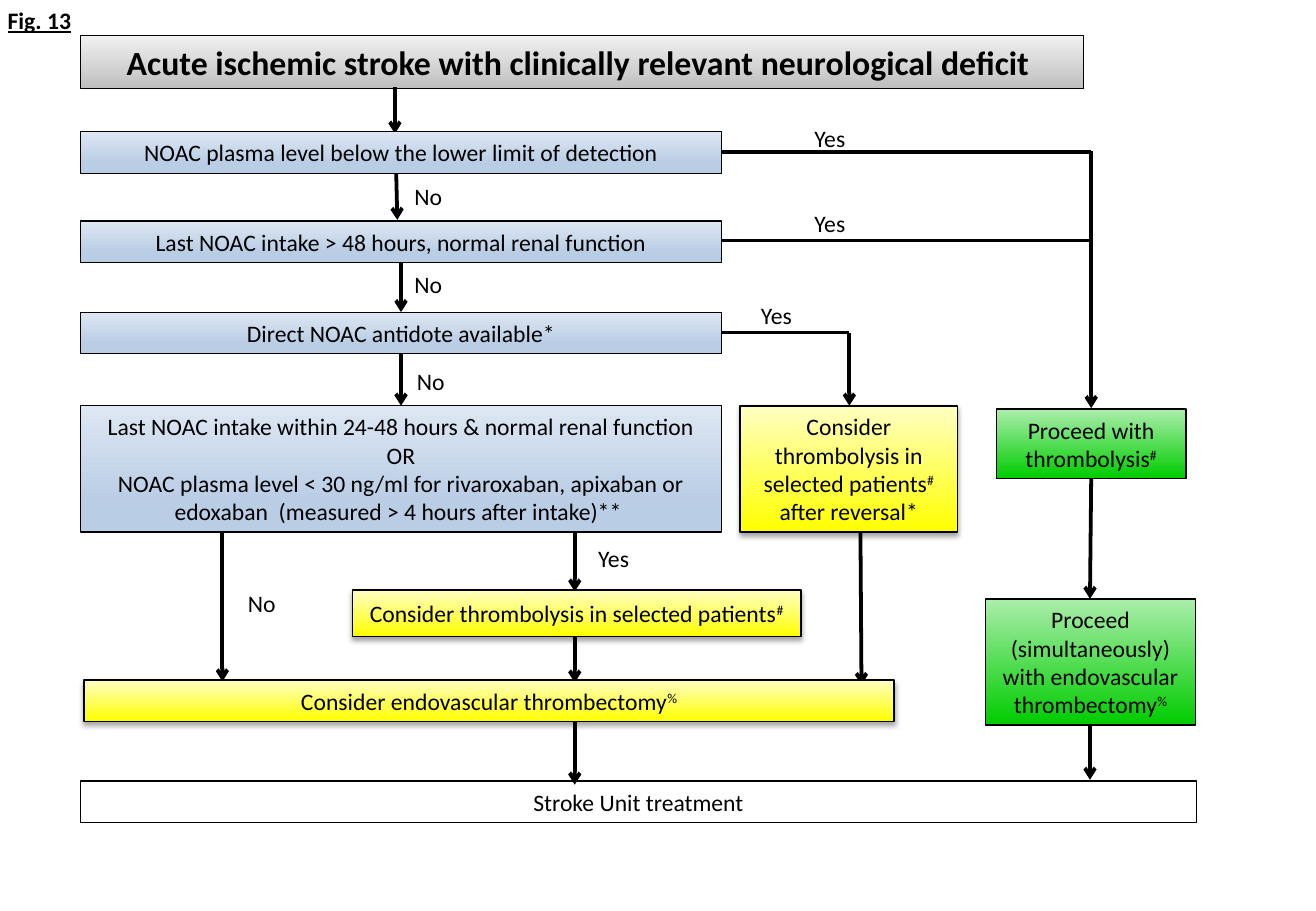
import itertools

import pptx
import pptx.dml.color
import pptx.enum.dml
import pptx.enum.shapes
import pptx.enum.text
import pptx.oxml
import pptx.oxml.ns
import pptx.util

RGBColor = pptx.dml.color.RGBColor
Inches = pptx.util.Inches
Pt = pptx.util.Pt
Anchor = pptx.enum.text.MSO_ANCHOR

BLACK = RGBColor(0x00, 0x00, 0x00)
GREY = (RGBColor(0xF1, 0xF1, 0xF1), RGBColor(0xBF, 0xBF, 0xBF), 1)
BLUE = (RGBColor(0xDE, 0xE7, 0xF3), RGBColor(0xB9, 0xCD, 0xE5), 0.77)
GREEN = (RGBColor(0xAB, 0xEE, 0xAB), RGBColor(0x00, 0xCC, 0x00), 1)
YELLOW = (RGBColor(0xFF, 0xFF, 0xC4), RGBColor(0xFF, 0xFF, 0x00), 1)

LEFT, RIGHT = 0.66, 9.85
QUESTION_WIDTH = 5.28
QUESTION_RIGHT = LEFT + QUESTION_WIDTH
ROW_HEIGHT, TALL_HEIGHT = 0.34, 1.04
LEVEL_ROW, INTAKE_ROW, ANTIDOTE_ROW, WINDOW_ROW = 1.08, 1.82, 2.57, 3.34
SELECTED_ROW, ENDOVASCULAR_ROW, STROKE_UNIT_ROW = 4.86, 5.6, 6.43
WINDOW_BOTTOM = WINDOW_ROW + TALL_HEIGHT
NO_COLUMN, MAIN_COLUMN, SELECTED_COLUMN = 1.83, 3.3, 4.73
REVERSAL_COLUMN, THROMBOLYSIS_COLUMN = 6.99, 8.98

SHADOW = (
    '<a:effectLst %s><a:outerShdw blurRad="39370" dist="22860" dir="5400000" rotWithShape="0">'
    '<a:srgbClr val="000000"><a:alpha val="35000"/></a:srgbClr></a:outerShdw></a:effectLst>'
    % pptx.oxml.ns.nsdecls("a")
)


def write_text(shape, text, size=14, bold=False):
    frame = shape.text_frame
    for index, line in enumerate(text.split("\n")):
        paragraph = frame.add_paragraph() if index else frame.paragraphs[0]
        paragraph.alignment = pptx.enum.text.PP_ALIGN.CENTER
        paragraph.font.name = "Calibri"
        paragraph.font.size = Pt(size)
        paragraph.font.bold = bold
        paragraph.font.color.rgb = BLACK
        for raised, characters in itertools.groupby(line, key=lambda character: character in "#%"):
            run = paragraph.add_run()
            run.text = "".join(characters)
            if raised:
                run.font._element.set("baseline", "30000")


def paint_box(shape, gradient, line_width):
    shape.line.color.rgb = BLACK
    shape.line.width = Pt(line_width)
    if gradient is None:
        shape.fill.background()
        return
    top_color, bottom_color, end = gradient
    shape.fill.gradient()
    shape.fill.gradient_angle = 270
    first, last = shape.fill.gradient_stops
    first.color.rgb, first.position = top_color, 0
    last.color.rgb, last.position = bottom_color, end


presentation = pptx.Presentation()
presentation.slide_width = Inches(10.83)
presentation.slide_height = Inches(7.5)
slide = presentation.slides.add_slide(presentation.slide_layouts[5])

title = slide.shapes.title
title.left, title.top, title.width, title.height = map(Inches, (LEFT, 0.29, 8.26, 0.44))
title.text_frame.auto_size = pptx.enum.text.MSO_AUTO_SIZE.NONE
title.text_frame.vertical_anchor = Anchor.TOP
paint_box(title, GREY, 0.75)
write_text(title, "Acute ischemic stroke with clinically relevant neurological deficit ", 20, True)

arrows = [
    (3.25, 0.72, 3.25, 1.1),
    (3.26, 1.4, 3.27, 1.81),
    (MAIN_COLUMN, 2.15, MAIN_COLUMN, ANTIDOTE_ROW),
    (MAIN_COLUMN, 2.91, MAIN_COLUMN, WINDOW_ROW),
    (NO_COLUMN, WINDOW_BOTTOM, NO_COLUMN, 5.61),
    (SELECTED_COLUMN, 4.34, SELECTED_COLUMN, 4.87),
    (SELECTED_COLUMN, 4.99, SELECTED_COLUMN, 5.62),
    (SELECTED_COLUMN, 5.87, SELECTED_COLUMN, 6.46),
    (REVERSAL_COLUMN, 2.74, REVERSAL_COLUMN, WINDOW_ROW),
    (7.08, 4.23, 7.09, 5.64),
    (THROMBOLYSIS_COLUMN, 1.24, THROMBOLYSIS_COLUMN, 3.36),
    (THROMBOLYSIS_COLUMN, 3.94, 8.97, 4.93),
    (8.97, 5.85, 8.97, 6.42),
]
branches = [
    (QUESTION_RIGHT, 1.25, THROMBOLYSIS_COLUMN, 1.25),
    (QUESTION_RIGHT, 1.98, THROMBOLYSIS_COLUMN, 1.98),
    (QUESTION_RIGHT, 2.74, REVERSAL_COLUMN, 2.74),
]
for ends in branches + arrows:
    connector = slide.shapes.add_connector(
        pptx.enum.shapes.MSO_CONNECTOR.STRAIGHT, *map(Inches, ends))
    connector.line.color.rgb = BLACK
    connector.line.width = Pt(2.25 if ends in arrows else 2)
    if ends in arrows:
        connector.line._get_or_add_ln().append(pptx.oxml.parse_xml(
            '<a:tailEnd %s type="arrow"/>' % pptx.oxml.ns.nsdecls("a")))
    connector._element.spPr.append(pptx.oxml.parse_xml(
        "<a:effectLst %s/>" % pptx.oxml.ns.nsdecls("a")))

boxes = [
    (LEFT, LEVEL_ROW, QUESTION_WIDTH, 0.35, BLUE,
     "NOAC plasma level below the lower limit of detection"),
    (LEFT, INTAKE_ROW, QUESTION_WIDTH, ROW_HEIGHT, BLUE,
     "Last NOAC intake > 48 hours, normal renal function"),
    (LEFT, ANTIDOTE_ROW, QUESTION_WIDTH, ROW_HEIGHT, BLUE, "Direct NOAC antidote available*"),
    (LEFT, WINDOW_ROW, QUESTION_WIDTH, TALL_HEIGHT, BLUE,
     "Last NOAC intake within 24-48 hours & normal renal function\nOR\n"
     "NOAC plasma level < 30 ng/ml for rivaroxaban, apixaban or edoxaban  "
     "(measured > 4 hours after intake)** "),
    (6.09, WINDOW_ROW, 1.79, TALL_HEIGHT, YELLOW,
     "Consider thrombolysis in selected patients# after reversal*"),
    (2.9, SELECTED_ROW, 3.69, 0.38, YELLOW, "Consider thrombolysis in selected patients#"),
    (0.69, ENDOVASCULAR_ROW, 6.67, ROW_HEIGHT, YELLOW, "Consider endovascular thrombectomy%"),
    (8.2, 3.37, 1.56, 0.57, GREEN, "Proceed with thrombolysis#"),
    (8.11, 4.93, 1.73, TALL_HEIGHT, GREEN,
     "Proceed (simultaneously) with endovascular thrombectomy%"),
    (LEFT, STROKE_UNIT_ROW, RIGHT - LEFT, ROW_HEIGHT, None, "Stroke Unit treatment"),
]
for left, top, width, height, gradient, text in boxes:
    box = slide.shapes.add_shape(
        pptx.enum.shapes.MSO_SHAPE.RECTANGLE, *map(Inches, (left, top, width, height)))
    paint_box(box, gradient, 1 if gradient in (YELLOW, GREEN) else 0.75)
    if gradient is YELLOW:
        box._element.spPr.append(pptx.oxml.parse_xml(SHADOW))
    else:
        box.shadow.inherit = False
    box.text_frame.word_wrap = True
    box.text_frame.vertical_anchor = Anchor.MIDDLE
    write_text(box, text)

labels = [
    ("Yes", 6.6, 0.97), ("Yes", 6.6, 1.67), ("Yes", 6.16, 2.43), ("Yes", 4.82, 4.43),
    ("No", 3.31, 1.45), ("No", 3.31, 2.17), ("No", 3.33, 2.97), ("No", 1.94, 4.8),
    ("Fig. 13", -0.04, 0),
]
label_widths = {"Yes": 0.46, "No": 0.43, "Fig. 13": 0.73}
for text, left, top in labels:
    label = slide.shapes.add_textbox(*map(Inches, (left, top, label_widths[text], ROW_HEIGHT)))
    label.text_frame.word_wrap = False
    is_figure_number = text == "Fig. 13"
    write_text(label, text, bold=is_figure_number)
    label.text_frame.paragraphs[0].font.underline = is_figure_number

presentation.save("out.pptx")
